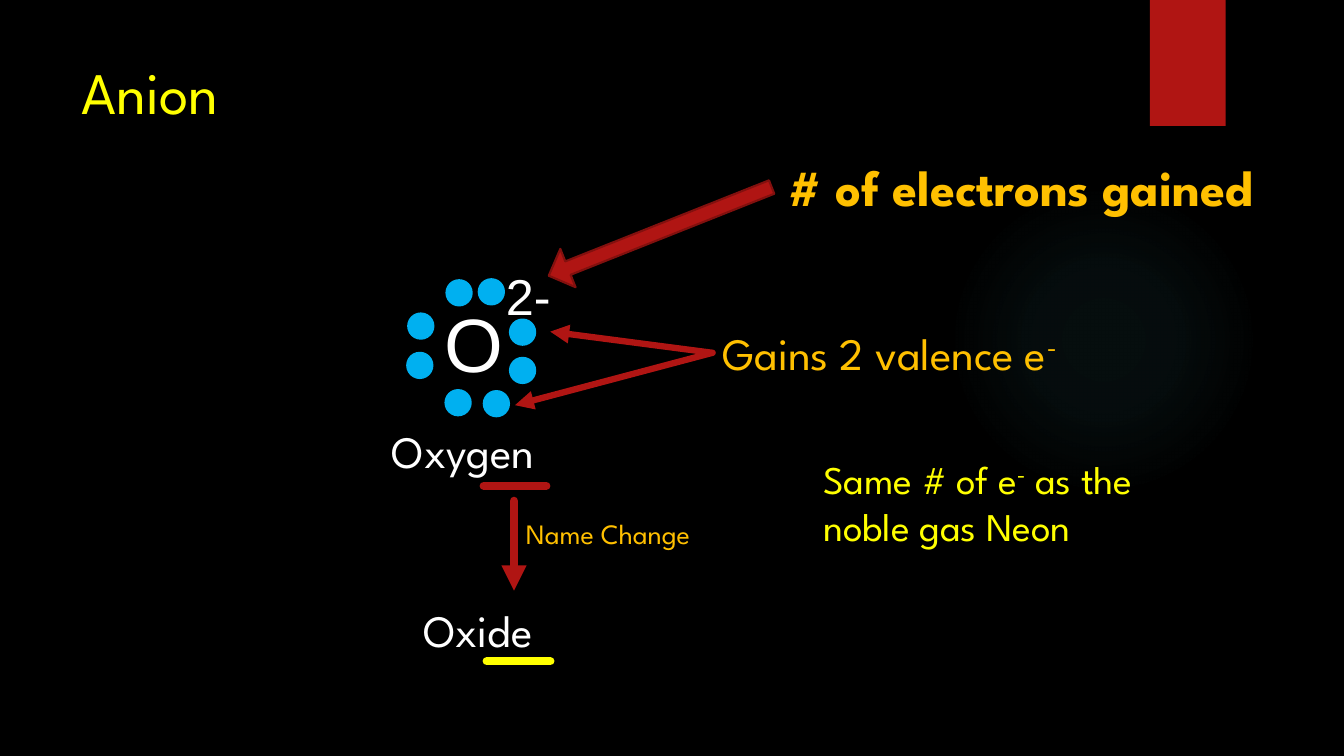
from lxml.etree import SubElement
from pptx import Presentation
from pptx.dml.color import RGBColor
from pptx.enum.shapes import MSO_CONNECTOR, MSO_SHAPE
from pptx.oxml import parse_xml
from pptx.oxml.ns import nsdecls, qn
from pptx.util import Inches, Pt

CELL = Inches(0.5)  # side of one grid square
HUES = {
    "black": "000000", "white": "FFFFFF", "yellow": "FFFF00", "gold": "FFC000",
    "red": "B01513", "dark": "82100E", "blue": "00B0F0", "teal": "50B9C1",
}
RGB = {name: RGBColor.from_string(code) for name, code in HUES.items()}


def grid(*cells):
    return [round(cell * CELL) for cell in cells]


def draw(ends, hue, width, arrow):
    line = slide.shapes.add_connector(MSO_CONNECTOR.STRAIGHT, *grid(*ends))
    line.line.color.rgb = RGB[hue]
    line.line.width = Pt(width)
    stroke = line.line._get_or_add_ln()
    stroke.set("cap", "rnd")
    SubElement(stroke, qn("a:round"))
    if arrow:
        SubElement(stroke, qn("a:tailEnd"), type="triangle")
    SubElement(line._element.spPr, qn("a:effectLst"))
    return line


deck = Presentation()
deck.slide_width, deck.slide_height = grid(26.67, 15)
slide = deck.slides.add_slide(deck.slide_layouts[6])
slide.background.fill.solid()
slide.background.fill.fore_color.rgb = RGB["black"]

# Faint round glow
glow = slide.shapes.add_shape(MSO_SHAPE.OVAL, *grid(18.82, 3.66, 6.16, 6.16))
glow.shadow.inherit = False
glow.line.fill.background()
stops = "".join(
    f'<a:gs pos="{pos}000"><a:srgbClr val="{HUES["teal"]}">'
    f'<a:alpha val="{alpha}000"/></a:srgbClr></a:gs>'
    for pos, alpha in [(0, 7), (36, 6), (69, 0)]
)
glow._element.spPr.find(qn("a:prstGeom")).addnext(parse_xml(
    f'<a:gradFill {nsdecls("a")} rotWithShape="1"><a:gsLst>{stops}</a:gsLst>'
    '<a:path path="circle"><a:fillToRect l="50000" t="50000" r="50000" b="50000"/>'
    "</a:path></a:gradFill>"
))

# Corner tab, eight electrons and block arrow
dots = [
    (8.86, 5.56), (9.5, 5.54), (10.12, 6.34), (10.12, 7.1),
    (9.6, 7.76), (8.84, 7.74), (8.08, 7), (8.1, 6.22),
]
forms = [(MSO_SHAPE.RECTANGLE, (22.82, 0, 1.5, 2.5), "red", None)]
forms += [(MSO_SHAPE.OVAL, (*dot, 0.5, 0.5), "blue", "blue") for dot in dots]
forms += [(MSO_SHAPE.RIGHT_ARROW, (10.72, 4.18, 4.76, 0.82), "red", "dark")]
for kind, place, hue, edge in forms:
    form = slide.shapes.add_shape(kind, *grid(*place))
    form.shadow.inherit = False
    form.fill.solid()
    form.fill.fore_color.rgb = RGB[hue]
    if edge:
        form.line.color.rgb = RGB[edge]
        form.line.width = Pt(1.5)
    else:
        form.line.fill.background()
form.rotation = 158.3
form.adjustments[0] = 0.35

# Labels: parts after an odd caret are raised
labels = [
    ("Anion", (1.42, 1, 3.74, 1.62), 42, "yellow"),
    ("2-", (9.84, 5.16, 1.84, 1.42), 36, "white"),
    ("O", (8.62, 5.8, 1.58, 2.02), 54, "white"),
    ("Oxygen", (7.58, 8.3, 4.08, 1.28), 32, "white"),
    ("Oxide", (8.2, 11.86, 3.26, 1.28), 32, "white"),
    ("Name Change", (10.24, 10.14, 4.64, 0.88), 20, "gold"),
    ("Gains 2 valence e^-", (14.14, 6.36, 8.76, 1.28), 32, "gold"),
    ("Same # of e^-^ as the noble gas Neon", (16.14, 8.94, 8.02, 2.08), 28, "yellow"),
    ("# of electrons gained", (15.46, 3, 10.74, 1.42), 36, "gold"),
]
boxes = {}
for text, place, size, hue in labels:
    box = slide.shapes.add_textbox(*grid(*place))
    boxes[text] = box
    box.text_frame.word_wrap = text != "O"
    for rank, part in enumerate(text.split("^")):
        run = box.text_frame.paragraphs[0].add_run()
        run.text = part
        run.font.name = "Arial" if text in ("2-", "O") else "League Spartan"
        run.font.size = Pt(size)
        run.font.bold = text.startswith("#")
        run.font.color.rgb = RGB[hue]
        if rank % 2:
            run._r.get_or_add_rPr().set("baseline", "30000")

# Arrows to the two gained electrons
for tip in [(10.92, 6.58), (10.22, 8.04)]:
    arrow = draw((14.14, 7, *tip), "red", 4.5, True)
    arrow.begin_connect(boxes["Gains 2 valence e^-"], 1)

# Name change: underlined endings and the arrow between them
draw((9.6, 9.64, 10.84, 9.64), "red", 6, False)
draw((10.2, 9.94, 10.2, 11.72), "red", 6, True)
draw((9.66, 13.12, 10.92, 13.12), "yellow", 6, False)

deck.save("out.pptx")
